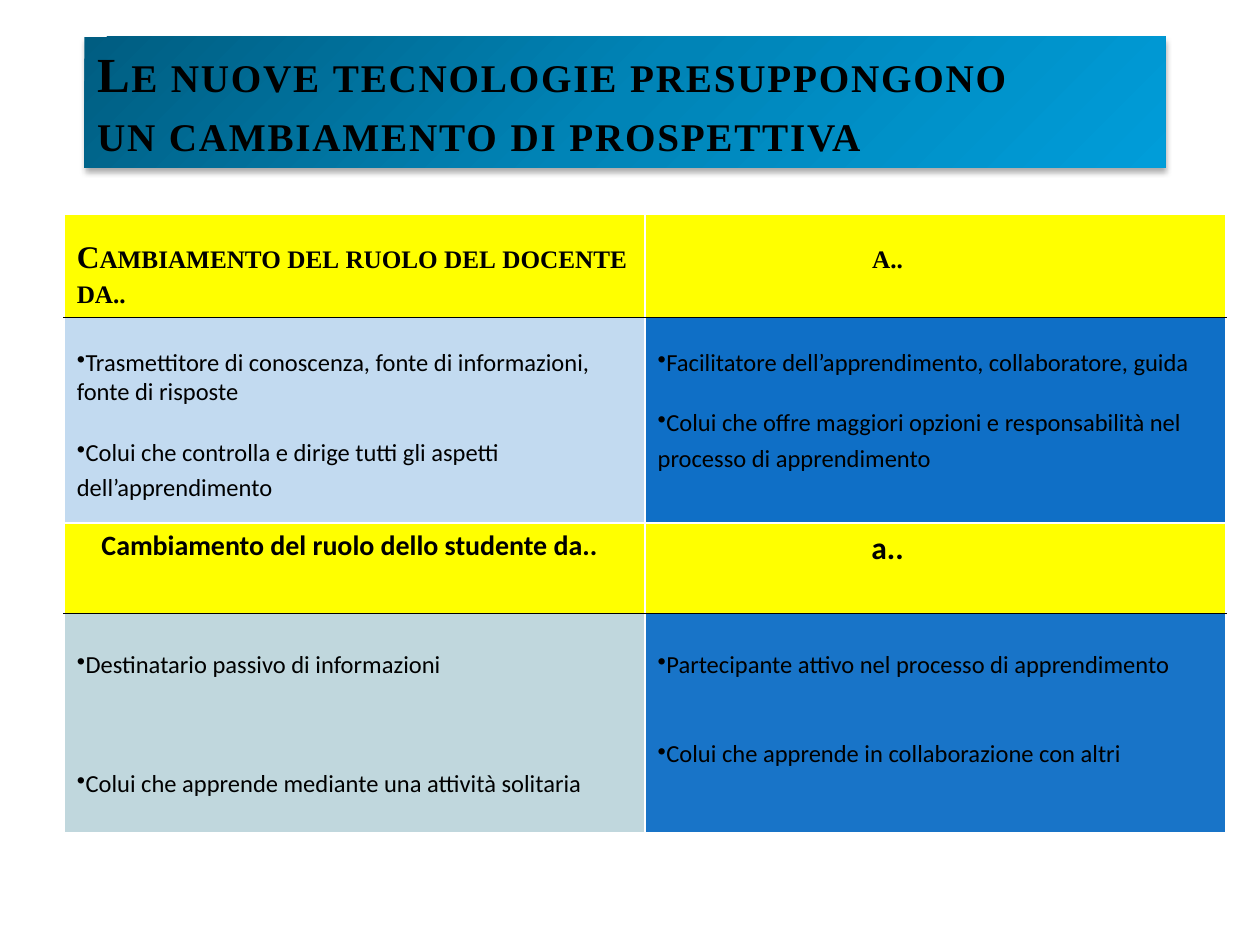
from pptx import Presentation
from pptx import util as u
from pptx.dml.color import RGBColor
from pptx.enum import text as t
from pptx.oxml import parse_xml
from pptx.oxml.ns import nsdecls, qn

BLACK = RGBColor(0, 0, 0)
WHITE = RGBColor(255, 255, 255)
YELLOW = RGBColor(255, 255, 0)
BLUE = RGBColor(0x0F, 0x6F, 0xC6)
TEAL = RGBColor(0x04, 0x61, 0x7B)
STOPS = [(0, RGBColor(0, 0x5D, 0x81)), (50, RGBColor(0, 0x84, 0xB7)),
         (100, RGBColor(0, 0x9D, 0xD9))]
SERIF, SANS = "Times New Roman", "Calibri"
LEFT, MID = t.PP_ALIGN.LEFT, t.PP_ALIGN.CENTER

TITLE = "Le nuove tecnologie presuppongono\vun cambiamento di prospettiva"
HEADS = {
    0: [("Cambiamento del ruolo del docente da..", SERIF, 18, LEFT, 0.1),
        ("a..", SERIF, 18, MID, 0.86)],
    2: [("Cambiamento del ruolo dello studente da..", SANS, 16, MID, 0.18),
        ("a..", SANS, 18, MID, 0.86)],
}
BODIES = {
    1: [(["Trasmettitore di conoscenza, fonte di informazioni, fonte di risposte",
          "Colui che controlla e dirige tutti gli aspetti dell’apprendimento"],
         BLUE, 25, 14, 1.2),
        (["Facilitatore dell’apprendimento, collaboratore, guida",
          "Colui che offre maggiori opzioni e responsabilità nel processo di apprendimento"],
         BLUE, 100, 14, 1.2)],
    3: [(["Destinatario passivo di informazioni",
          "Colui che apprende mediante una attività solitaria"], TEAL, 25, 51, 1),
        (["Partecipante attivo nel processo di apprendimento",
          "Colui che apprende in collaborazione con altri"], BLUE, 96, 34, 1)],
}
ROWS = [0.82, 1.63, 0.72, 1.74]
TOPS = [0.21, 0.24, 0.05, 0.29]
WIDE = 4.61


def style(para, face, size, bold, **more):
    font = para.font
    font.name, font.size, font.bold = face, u.Pt(size), bold
    font.color.rgb = BLACK
    node = para._p.pPr.find(qn("a:defRPr"))
    for key, val in more.items():
        node.set(key, val)


def paint(cell, color, alpha, lines):
    cell.fill.solid()
    cell.fill.fore_color.rgb = color
    props = cell._tc.get_or_add_tcPr()
    if alpha < 100:
        tone = props.find(".//" + qn("a:srgbClr"))
        tone.append(parse_xml(f'<a:alpha {nsdecls("a")} val="{alpha * 1000}"/>'))
    for i, (side, ink) in enumerate(zip("LRTB", lines)):
        props.insert(i, parse_xml(
            f'<a:ln{side} {nsdecls("a")} w="12700"><a:solidFill>'
            f'<a:srgbClr val="{ink}"/></a:solidFill></a:ln{side}>'))


def add_title(slide):
    box = slide.shapes.title
    box.left, box.top = u.Inches(0.67), u.Inches(0.29)
    box.width, box.height = u.Inches(8.58), u.Inches(1.04)
    stops = "".join(f'<a:gs pos="{pos * 1000}"><a:srgbClr val="{ink}"/></a:gs>'
                    for pos, ink in STOPS)
    props = box._element.spPr
    props.append(parse_xml(
        f'<a:gradFill {nsdecls("a")} rotWithShape="1"><a:gsLst>{stops}</a:gsLst>'
        '<a:lin ang="2700000" scaled="0"/></a:gradFill>'))
    props.append(parse_xml(
        f'<a:effectLst {nsdecls("a")}><a:outerShdw blurRad="{u.Pt(3.5)}" '
        f'dist="{u.Pt(2.2)}" dir="5400000" rotWithShape="0"><a:srgbClr val="{BLACK}">'
        '<a:alpha val="32000"/></a:srgbClr></a:outerShdw></a:effectLst>'))
    frame = box.text_frame
    frame.text = TITLE
    frame.word_wrap = True
    frame.auto_size = t.MSO_AUTO_SIZE.NONE
    frame.vertical_anchor = t.MSO_ANCHOR.MIDDLE
    para = frame.paragraphs[0]
    para.alignment = LEFT
    style(para, SERIF, 28, True, cap="small", spc="100")


def add_table(slide):
    grid = slide.shapes.add_table(
        len(ROWS), 2, u.Inches(0.51), u.Inches(1.7),
        u.Inches(2 * WIDE), u.Inches(sum(ROWS))).table
    grid.first_row = grid.horz_banding = False
    for row, (high, top) in enumerate(zip(ROWS, TOPS)):
        grid.rows[row].height = u.Inches(high)
        for col in range(2):
            grid.cell(row, col).margin_top = u.Inches(top)
    for row, heads in HEADS.items():
        for col, (words, face, size, align, right) in enumerate(heads):
            cell = grid.cell(row, col)
            cell.margin_right = u.Inches(right)
            cell.text = words
            para = cell.text_frame.paragraphs[0]
            para.alignment = align
            style(para, face, size, True, cap="small" if face == SERIF else "none")
            paint(cell, YELLOW, 100, (WHITE, WHITE, WHITE, BLACK))
    for row, bodies in BODIES.items():
        for col, (items, color, alpha, gap, pitch) in enumerate(bodies):
            cell = grid.cell(row, col)
            cell.text = "\n".join(items)
            first, last = cell.text_frame.paragraphs
            last.space_before, last.line_spacing = u.Pt(gap), pitch
            for para in (first, last):
                props = para._p.get_or_add_pPr()
                props.set("marL", "0")
                props.set("indent", "0")
                props.append(parse_xml(f'<a:buChar {nsdecls("a")} char="•"/>'))
                style(para, SANS, 14, False)
            paint(cell, color, alpha, (WHITE, WHITE, BLACK, WHITE))


def main():
    deck = Presentation()
    deck.slide_width, deck.slide_height = u.Inches(10), u.Inches(7.5)
    slide = deck.slides.add_slide(deck.slide_layouts[5])
    add_table(slide)
    add_title(slide)
    deck.save("out.pptx")


if __name__ == "__main__":
    main()
